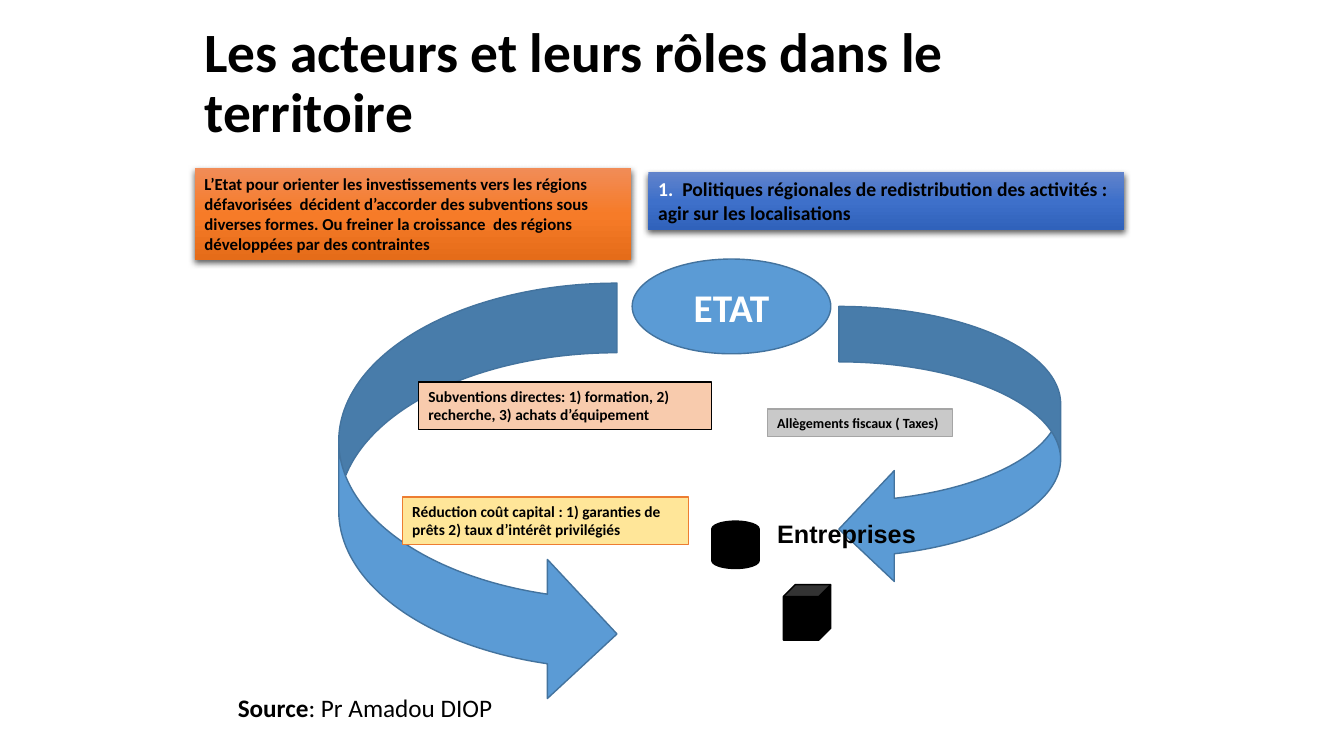
from lxml import etree
from pptx import Presentation
from pptx.dml.color import RGBColor
from pptx.enum.shapes import MSO_SHAPE
from pptx.enum.text import MSO_ANCHOR, PP_ALIGN
from pptx.oxml.ns import qn
from pptx.util import Inches, Pt

RECT = MSO_SHAPE.RECTANGLE
OVAL = MSO_SHAPE.OVAL
DISK = MSO_SHAPE.FLOWCHART_MAGNETIC_DISK
CUBE = MSO_SHAPE.CUBE
RIGHT = MSO_SHAPE.CURVED_RIGHT_ARROW
LEFT = MSO_SHAPE.CURVED_LEFT_ARROW
TOP, MIDDLE = MSO_ANCHOR.TOP, MSO_ANCHOR.MIDDLE
START, CENTER = PP_ALIGN.LEFT, PP_ALIGN.CENTER

COLORS = {
    "black": "000000", "white": "FFFFFF",
    "blue": "5B9BD5", "navy": "43739E",
    "gray": "C9C9C9", "steel": "A5A5A5",
    "peach": "F8CBAD", "cream": "FFE699", "orange": "ED7D31",
}
BLUES = ("6183CB", "3E70CA", "3062BB")
REDS = ("F18C57", "F67B28", "E56C19")


class Board:
    def __init__(self, slide, font="Calibri"):
        self.slide = slide
        self.font = font

    def color(self, name):
        return RGBColor.from_string(COLORS[name])

    def letter(self, shape, runs, size, font=None, align=START, anchor=TOP,
               wrap=True):
        """Each run is (text, color, bold)."""
        frame = shape.text_frame
        frame.word_wrap = wrap
        frame.vertical_anchor = anchor
        para = frame.paragraphs[0]
        para.alignment = align
        for text, color, bold in runs:
            run = para.add_run()
            run.text = text
            run.font.name = font or self.font
            run.font.size = Pt(size)
            run.font.bold = bold
            run.font.color.rgb = self.color(color)
        return para

    def text(self, box, runs, size, **style):
        shape = self.slide.shapes.add_textbox(*map(Inches, box))
        return self.letter(shape, runs, size, **style)

    def shape(self, kind, box, fill, line):
        shape = self.slide.shapes.add_shape(kind, *map(Inches, box))
        shape.shadow.inherit = False
        shape.fill.solid()
        shape.fill.fore_color.rgb = self.color(fill)
        shape.line.color.rgb = self.color(line)
        shape.line.width = Pt(1)
        return shape

    def label(self, box, fill, line, text, size, wrap=True):
        shape = self.shape(RECT, box, fill, line)
        self.letter(shape, [(text, "black", True)], size, wrap=wrap)

    def banner(self, box, shades, runs, size):
        shape = self.slide.shapes.add_shape(RECT, *map(Inches, box))
        shape.line.fill.background()
        # Three-stop gradient, top to bottom
        shape.fill.gradient()
        shape.fill.gradient_angle = 270
        props = shape.element.spPr
        stops = props.find(".//" + qn("a:gsLst"))
        for stop in list(stops):
            stops.remove(stop)
        for i, shade in enumerate(shades):
            stop = etree.SubElement(stops, qn("a:gs"), pos=str(i * 50000))
            etree.SubElement(stop, qn("a:srgbClr"), val=shade)
        # Soft shadow below
        shape.shadow.inherit = False
        cast = etree.SubElement(
            props.find(qn("a:effectLst")), qn("a:outerShdw"),
            blurRad=str(Pt(4.5)), dist=str(Pt(1.5)), dir="5400000",
            algn="ctr", rotWithShape="0")
        tint = etree.SubElement(cast, qn("a:srgbClr"), val=COLORS["black"])
        etree.SubElement(tint, qn("a:alpha"), val="63000")
        self.letter(shape, runs, size)


def main():
    deck = Presentation()
    deck.slide_width, deck.slide_height = Inches(13.33), Inches(7.5)
    board = Board(deck.slides.add_slide(deck.slide_layouts[6]))

    # Title
    title = board.text(
        (1.93, 0.32, 8.91, 1.03),
        [("Les acteurs et leurs rôles dans le territoire", "black", True)],
        39.6, anchor=MIDDLE)
    title.line_spacing = 0.9

    # Firms, state and the arrows between them
    board.shape(DISK, (7.06, 5.17, 0.47, 0.47), "black", "black")
    board.shape(CUBE, (7.77, 5.8, 0.47, 0.55), "black", "black")
    state = board.shape(OVAL, (6.27, 2.57, 1.97, 0.94), "blue", "navy")
    board.letter(state, [("ETAT", "white", True)], 28,
                 align=CENTER, anchor=MIDDLE)
    board.shape(RIGHT, (3.36, 2.81, 2.76, 4.17), "blue", "navy")
    board.shape(LEFT, (8.32, 3.04, 2.2, 2.76), "blue", "navy")

    # Kinds of aid
    board.label((7.61, 4.06, 1.84, 0.27), "gray", "steel",
                "Allègements fiscaux ( Taxes)", 10, wrap=False)
    board.label((4.15, 3.79, 2.91, 0.47), "peach", "black",
                "Subventions directes: 1) formation, 2) recherche, "
                "3) achats d’équipement", 11)
    board.label((3.99, 4.93, 2.84, 0.47), "cream", "orange",
                "Réduction coût capital : 1) garanties de prêts "
                "2) taux d’intérêt privilégiés", 11)
    board.text((7.61, 5.09, 2.05, 0.4), [("Entreprises", "black", True)],
               18, font="Arial")

    # Banners
    board.banner((6.43, 1.71, 4.72, 0.57), BLUES, [
        ("1.  ", "white", True),
        ("Politiques régionales de redistribution des activités : "
         "agir sur les localisations", "black", True)], 14)
    board.banner((1.93, 1.67, 4.33, 0.91), REDS, [
        ("L’Etat pour orienter les investissements vers les régions "
         "défavorisées  décident d’accorder des subventions sous diverses "
         "formes. Ou freiner la croissance  des régions  développées par "
         "des contraintes", "black", True)], 12)

    # Source
    board.text((2.26, 6.82, 4.49, 0.4), [
        ("Source", "black", True),
        (": Pr Amadou DIOP", "black", False)], 18)

    deck.save("out.pptx")


if __name__ == "__main__":
    main()
